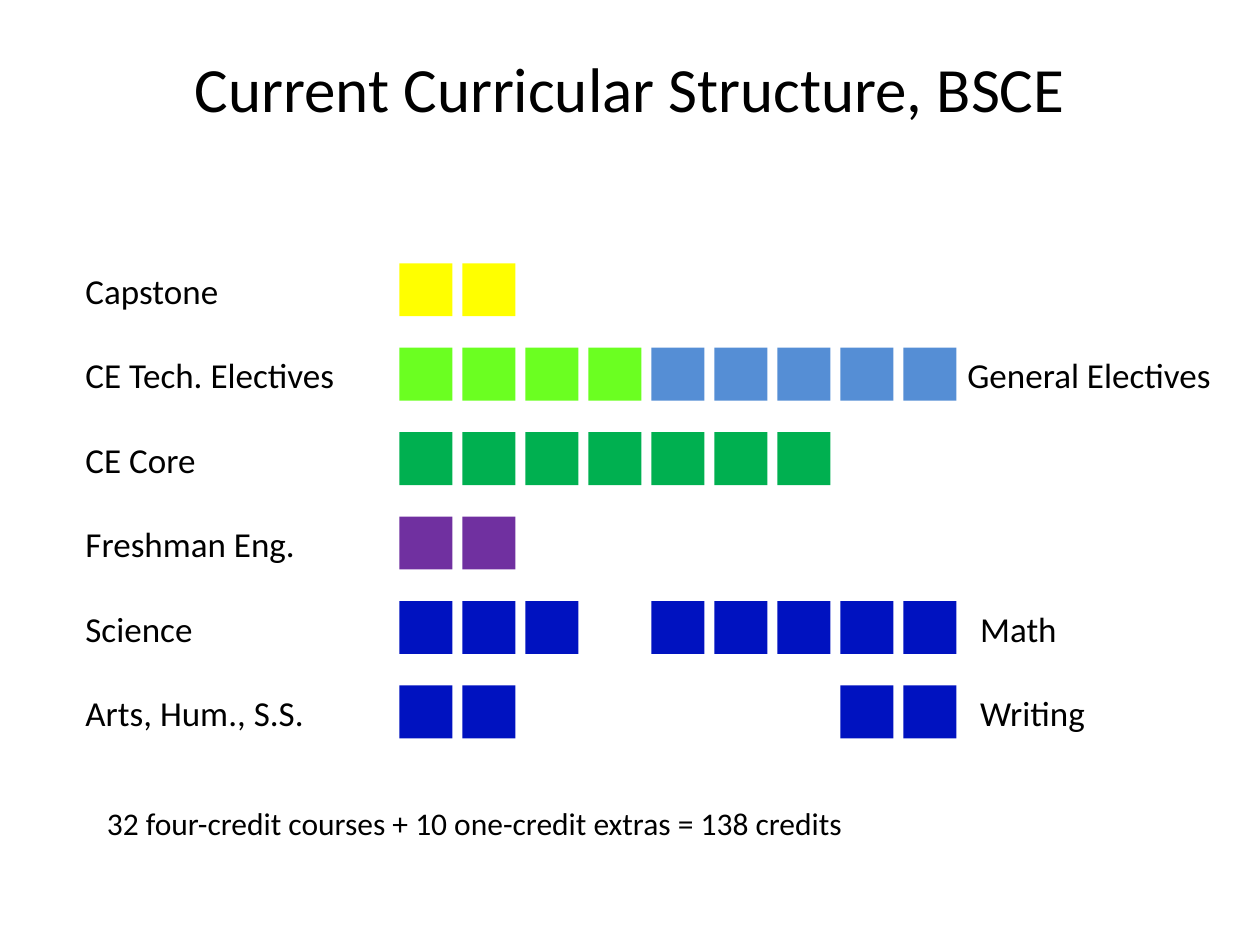
from pptx import Presentation
from pptx.dml.color import RGBColor
from pptx.enum import shapes, text
from pptx.util import Inches, Pt

BLACK = RGBColor(0x00, 0x00, 0x00)
YELLOW = RGBColor(0xFF, 0xFF, 0x00)
LIME = RGBColor(0x6B, 0xFF, 0x21)
SKY = RGBColor(0x55, 0x8E, 0xD5)
GREEN = RGBColor(0x00, 0xB0, 0x50)
PURPLE = RGBColor(0x70, 0x30, 0xA0)
NAVY = RGBColor(0x00, 0x12, 0xC0)

TITLE = "Current Curricular Structure, BSCE"
TOTAL = "32 four-credit courses + 10 one-credit extras = 138 credits"

# Label, label left, label width, row, first column, courses, colour
SUBJECTS = [
    ("Capstone", 0.58, 1.27, 0, 0, 2, YELLOW),
    ("CE Tech. Electives", 0.58, 2.2, 1, 0, 4, LIME),
    ("General Electives", 7.58, 2.16, 1, 4, 5, SKY),
    ("CE Core", 0.58, 1.08, 2, 0, 7, GREEN),
    ("Freshman Eng.", 0.58, 1.88, 3, 0, 2, PURPLE),
    ("Science", 0.58, 1.06, 4, 0, 3, NAVY),
    ("Math", 7.68, 0.82, 4, 4, 5, NAVY),
    ("Arts, Hum., S.S.", 0.58, 1.95, 5, 0, 2, NAVY),
    ("Writing", 7.68, 1.04, 5, 7, 2, NAVY),
]

GRID_LEFT, GRID_TOP = 3.17, 2.09
COLUMN_STEP, ROW_STEP = 0.5, 0.67
COURSE_SIZE = 0.42


def write(frame, words, size=20, align=text.PP_ALIGN.LEFT,
          anchor=text.MSO_ANCHOR.TOP, wrap=False):
    frame.word_wrap = wrap
    frame.vertical_anchor = anchor
    paragraph = frame.paragraphs[0]
    paragraph.alignment = align
    run = paragraph.add_run()
    run.text = words
    run.font.name = "Calibri"
    run.font.size = Pt(size)
    run.font.color.rgb = BLACK


def add_label(slide, words, left, top, width, height=0.44, **style):
    label = slide.shapes.add_textbox(
        Inches(left), Inches(top), Inches(width), Inches(height))
    write(label.text_frame, words, **style)
    label.text_frame.auto_size = text.MSO_AUTO_SIZE.SHAPE_TO_FIT_TEXT


def add_course(slide, column, top, colour):
    course = slide.shapes.add_shape(
        shapes.MSO_SHAPE.RECTANGLE,
        Inches(GRID_LEFT + column * COLUMN_STEP), Inches(top),
        Inches(COURSE_SIZE), Inches(COURSE_SIZE))
    course.shadow.inherit = False
    course.fill.solid()
    course.fill.fore_color.rgb = colour
    course.line.fill.background()


def main():
    deck = Presentation()
    deck.slide_width, deck.slide_height = Inches(10), Inches(7.5)
    slide = deck.slides.add_slide(deck.slide_layouts[5])

    title = slide.shapes.title
    title.left, title.top = Inches(0.5), Inches(0.3)
    title.width, title.height = Inches(9), Inches(0.78)
    write(title.text_frame, TITLE, size=36, align=text.PP_ALIGN.CENTER,
          anchor=text.MSO_ANCHOR.MIDDLE, wrap=True)

    for name, left, width, row, first, count, colour in SUBJECTS:
        top = GRID_TOP + row * ROW_STEP
        add_label(slide, name, left, top, width)
        for column in range(first, first + count):
            add_course(slide, column, top, colour)

    add_label(slide, TOTAL, 0.75, 6.33, 6.11, height=0.4, size=18)
    deck.save("out.pptx")


if __name__ == "__main__":
    main()
